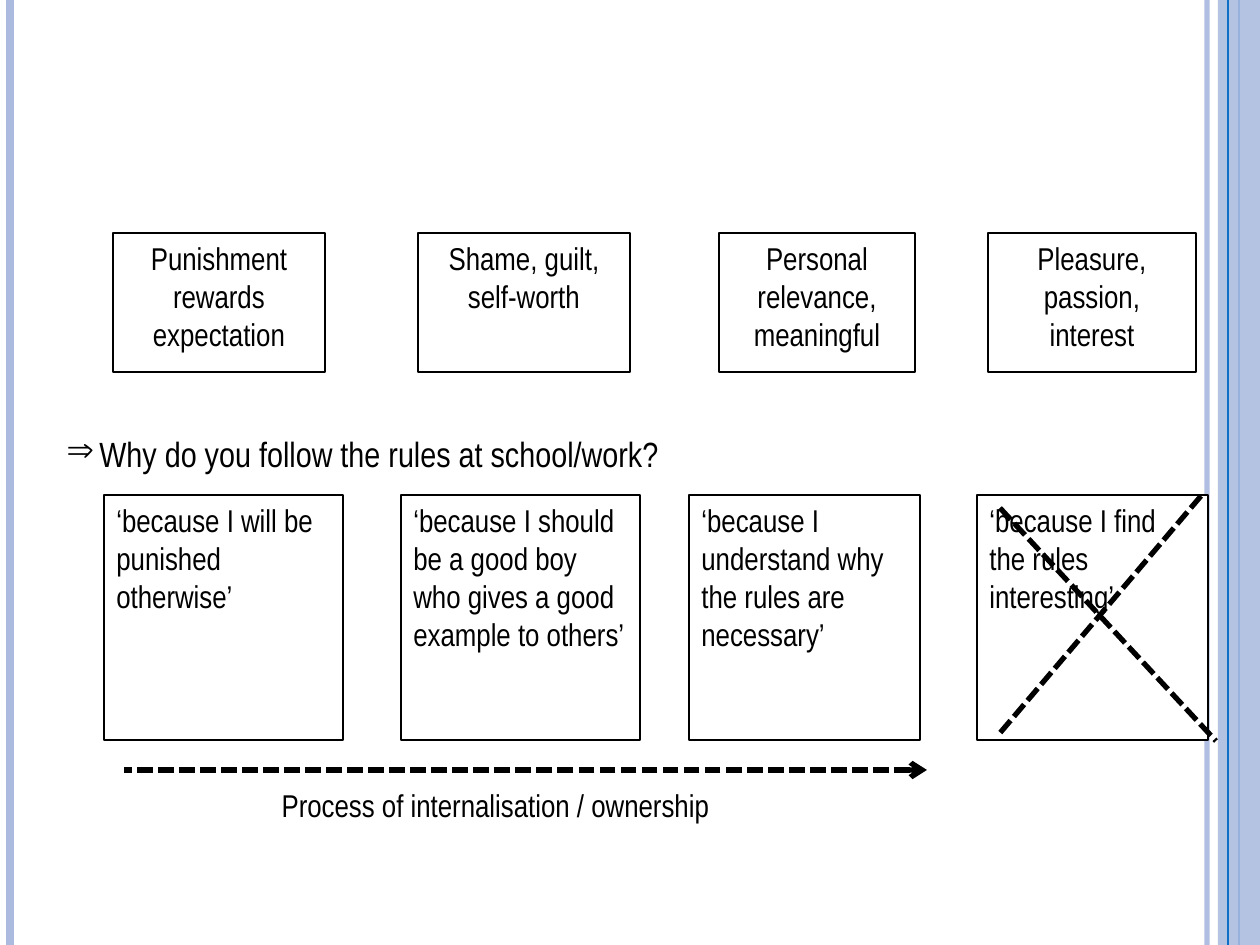
from pptx import Presentation
from pptx import util as u
from pptx.dml import color
from pptx.enum import dml, shapes, text
from pptx.oxml import ns, xmlchemy

PX = u.Inches(1) // 126
FONT = "Arial Narrow"
BLACK, WHITE, PALE, BLUE = "000000", "FFFFFF", "ABBBDF", "0F6FC6"
MOTIVES = [
    (113, 212, ["Punishment rewards", "expectation"]),
    (418, 212, ["Shame, guilt, self-worth"]),
    (719, 196, ["Personal relevance, meaningful"]),
    (988, 208, ["Pleasure, passion, interest"]),
]
REASONS = [
    (104, 239, "‘because I will be punished otherwise’"),
    (401, 239, "‘because I should be a good boy who gives a good example to others’"),
    (689, 231, "‘because I understand why the rules are necessary’"),
    (977, 231, "‘because I find the rules interesting’"),
]


def rgb(value):
    """Return the colour for a hex string."""
    return color.RGBColor.from_string(value)


def add_child(parent, tag, **attrs):
    """Append a DrawingML element with the given attributes."""
    child = xmlchemy.OxmlElement(tag)
    for name, value in attrs.items():
        child.set(name, str(value))
    parent.append(child)
    return child


def set_alpha(fill_owner, percent):
    """Make the solid colour inside an element partly transparent."""
    clr = fill_owner.find(".//" + ns.qn("a:srgbClr"))
    add_child(clr, "a:alpha", val=percent * 1000)


def add_rect(s, x, y, w, h, fill=WHITE, line=None):
    """Add a plain rectangle, outlined if a line colour is given."""
    sp = s.shapes.add_shape(shapes.MSO_SHAPE.RECTANGLE, x * PX, y * PX, w * PX, h * PX)
    sp.shadow.inherit = False
    sp.fill.solid()
    sp.fill.fore_color.rgb = rgb(fill)
    if line:
        sp.line.color.rgb = rgb(line)
        sp.line.width = u.Pt(0.75)
    else:
        sp.line.fill.background()
    return sp


def add_text(sp, lines, size=18, align=text.PP_ALIGN.LEFT, bullet=None):
    """Write paragraphs into a shape from its top edge."""
    tf = sp.text_frame
    tf.word_wrap = True
    tf.vertical_anchor = text.MSO_ANCHOR.TOP
    for i, line in enumerate(lines):
        p = tf.add_paragraph() if i else tf.paragraphs[0]
        p.alignment = align
        if bullet:
            pPr = p._p.get_or_add_pPr()
            pPr.set("marL", str(33 * PX))
            pPr.set("indent", str(-33 * PX))
            add_child(pPr, "a:buChar", char=bullet)
        r = p.add_run()
        r.text = line
        r.font.name = FONT
        r.font.size = u.Pt(size)
        r.font.color.rgb = rgb(BLACK)


def add_line(s, x1, y1, x2, y2, line, width, dashed=False, arrow=False):
    """Add a straight line, with an arrowhead at its start if asked."""
    c = s.shapes.add_connector(
        shapes.MSO_CONNECTOR.STRAIGHT, x1 * PX, y1 * PX, x2 * PX, y2 * PX)
    c.line.color.rgb = rgb(line)
    c.line.width = u.Pt(width)
    if dashed:
        c.line.dash_style = dml.MSO_LINE.SQUARE_DOT
    if arrow:
        add_child(c.line._get_or_add_ln(), "a:headEnd", type="arrow")
    add_child(c._element.spPr, "a:effectLst")
    return c


def add_borders(s):
    """Draw the vertical stripes at the slide's edges."""
    inner = add_line(s, 1207, 0, 1207, 945, PALE, 3)
    set_alpha(inner._element.spPr, 93)
    add_line(s, 10, 0, 10, 945, PALE, 4.5)
    add_line(s, 1239, 0, 1239, 945, BLUE, 1.5)
    band = add_rect(s, 1218, 0, 42, 945, PALE)
    set_alpha(band._element.spPr, 87)
    add_line(s, 1228, 0, 1228, 945, BLUE, 0.75)


def main():
    """Build the slide and save it."""
    prs = Presentation()
    prs.slide_width, prs.slide_height = 1260 * PX, 945 * PX
    s = prs.slides.add_slide(prs.slide_layouts[6])
    add_borders(s)

    question = add_rect(s, 54, 426, 832, 69)
    add_text(question, ["Why do you follow the rules at school/work?"], 20, bullet="⇒")
    for x, w, reason in REASONS:
        add_text(add_rect(s, x, 495, w, 245, line=BLACK), [reason])
    add_line(s, 1000, 508, 1216, 741, BLACK, 3, dashed=True)
    add_line(s, 1201, 496, 1000, 733, BLACK, 3, dashed=True)

    for x, w, lines in MOTIVES:
        box = add_rect(s, x, 233, w, 139, line=BLACK)
        add_text(box, lines, align=text.PP_ALIGN.CENTER)

    add_line(s, 927, 770, 124, 770, BLACK, 3, dashed=True, arrow=True)
    caption = add_rect(s, 233, 780, 525, 49)
    add_text(caption, ["Process of internalisation / ownership"], align=text.PP_ALIGN.CENTER)
    prs.save("out.pptx")


if __name__ == "__main__":
    main()
